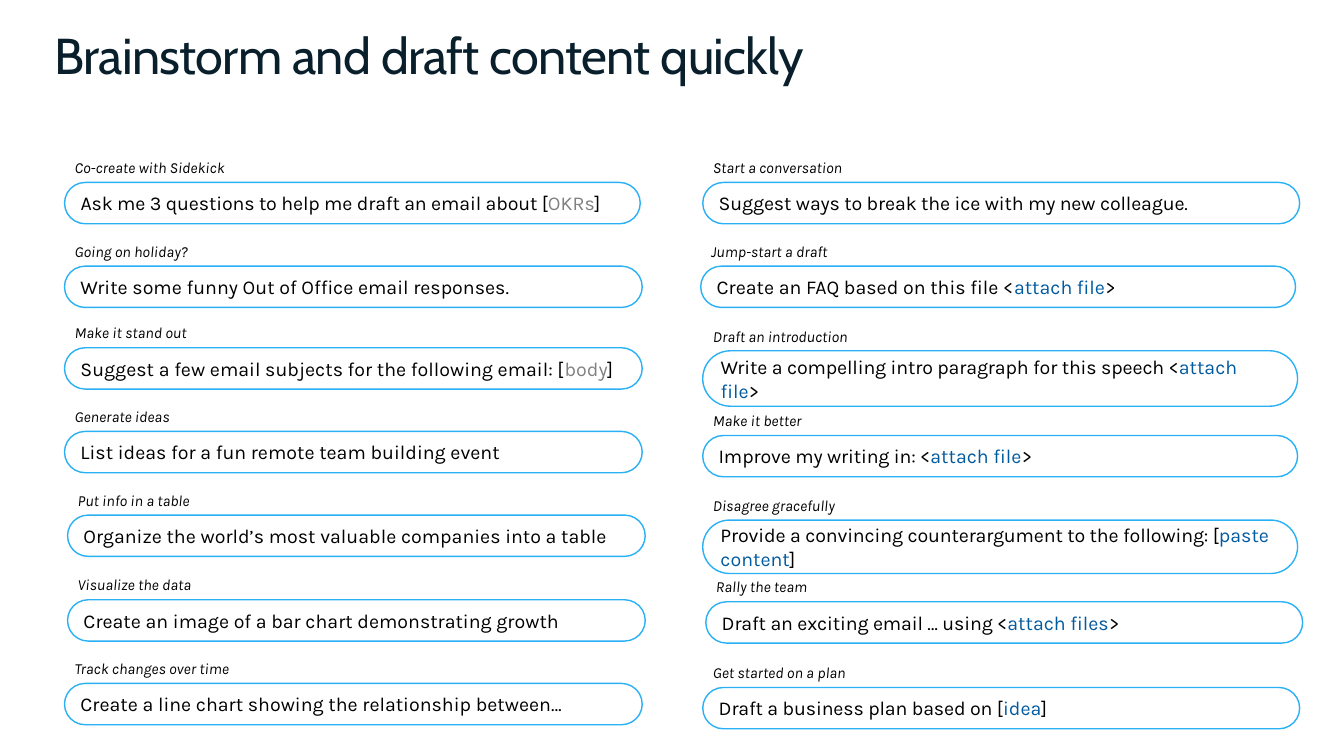
"""Build a slide of drafting prompts in two columns of labelled pills."""
from dataclasses import dataclass

from pptx import Presentation
from pptx.dml.color import RGBColor
from pptx.enum.shapes import MSO_SHAPE
from pptx.enum.text import MSO_ANCHOR, MSO_AUTO_SIZE, PP_ALIGN
from pptx.slide import Slide
from pptx.text.text import TextFrame, _Paragraph
from pptx.util import Inches, Pt

NAVY = RGBColor(0x09, 0x1F, 0x2C)
BLACK = RGBColor(0x00, 0x00, 0x00)
GREY = RGBColor(0x80, 0x80, 0x80)
LINK_BLUE = RGBColor(0x00, 0x5A, 0x9F)
SKY_BLUE = RGBColor(0x2A, 0xB0, 0xF5)
WHITE = RGBColor(0xFF, 0xFF, 0xFF)

TITLE_FONT = {"name": "Cabin", "size": Pt(36), "bold": False}
LABEL_FONT = {"name": "Karla", "size": Pt(11), "italic": True}
PROMPT_FONT = {"name": "Karla", "size": Pt(14)}
NO_MARGINS = {"margin_left": 0, "margin_top": 0, "margin_right": 0, "margin_bottom": 0}
LABEL_FRAME = {"word_wrap": True, **NO_MARGINS}
PROMPT_FRAME = {"word_wrap": True, "vertical_anchor": MSO_ANCHOR.MIDDLE}
TITLE_FRAME = {
    "word_wrap": True,
    "vertical_anchor": MSO_ANCHOR.TOP,
    "auto_size": MSO_AUTO_SIZE.NONE,
}

LABEL_INDENT = 0.1
LABEL_RISE = 0.24
LABEL_WIDTH = 5.38
LABEL_HEIGHT = 0.19


@dataclass(frozen=True)
class Prompt:
    """A labelled prompt with an optional highlighted slot."""

    label: str
    lead: str
    left: float
    top: float
    width: float
    slot: str = ""
    closing: str = ""
    height: float = 0.41
    tracking: float = 0


@dataclass(frozen=True)
class Column:
    """A column of prompts sharing one slot colour."""

    slot_color: RGBColor
    prompts: tuple[Prompt, ...]


COLUMNS = (
    Column(GREY, (
        Prompt("Co-create with Sidekick", "Ask me 3 questions to help me draft an email about [",
               0.64, 1.81, 5.71, "OKRs", "]", tracking=-0.1),
        Prompt("Going on holiday?", "Write some funny Out of Office email responses.",
               0.64, 2.64, 5.73),
        Prompt("Make it stand out", "Suggest a few email subjects for the following email: [",
               0.64, 3.45, 5.73, "body", "]"),
        Prompt("Generate ideas", "List ideas for a fun remote team building event",
               0.64, 4.28, 5.73),
        Prompt("Put info in a table", "Organize the world’s most valuable companies into a table",
               0.67, 5.11, 5.73),
        Prompt("Visualize the data", "Create an image of a bar chart demonstrating growth",
               0.67, 5.95, 5.73),
        Prompt("Track changes over time", "Create a line chart showing the relationship between…",
               0.64, 6.78, 5.73),
    )),
    Column(LINK_BLUE, (
        Prompt("Start a conversation", "Suggest ways to break the ice with my new colleague.",
               6.97, 1.81, 5.92, tracking=-0.1),
        Prompt("Jump-start a draft", "Create an FAQ based on this file <",
               6.95, 2.64, 5.9, "attach file", ">"),
        Prompt("Draft an introduction", "Write a compelling intro paragraph for this speech <",
               6.97, 3.48, 5.9, "attach file", ">", 0.55, -0.1),
        Prompt("Make it better", "Improve my writing in: <",
               6.97, 4.32, 5.9, "attach file", ">", tracking=-0.1),
        Prompt("Disagree gracefully", "Provide a convincing counterargument to the following: [",
               6.97, 5.16, 5.9, "paste content", "]", 0.53, -0.1),
        Prompt("Rally the team", "Draft an exciting email … using <",
               7, 5.97, 5.92, "attach files", ">", tracking=-0.1),
        Prompt("Get started on a plan", "Draft a business plan based on [",
               6.97, 6.82, 5.92, "idea", "]", tracking=-0.1),
    )),
)


def apply_format(target: object, values: dict) -> None:
    """Set every named attribute on the target."""
    for attribute, value in values.items():
        setattr(target, attribute, value)


def add_text(paragraph: _Paragraph, text: str, font: dict, color: RGBColor,
             tracking: float = 0) -> None:
    """Append a formatted run to the paragraph."""
    run = paragraph.add_run()
    run.text = text
    apply_format(run.font, font)
    run.font.color.rgb = color
    if tracking:
        run._r.get_or_add_rPr().set("spc", str(round(tracking * 100)))


def start_text(frame: TextFrame, frame_format: dict) -> _Paragraph:
    """Format the frame and return its left-aligned first paragraph."""
    apply_format(frame, frame_format)
    paragraph = frame.paragraphs[0]
    paragraph.alignment = PP_ALIGN.LEFT
    return paragraph


def add_title(slide: Slide, text: str) -> None:
    """Place the headline in the title placeholder."""
    headline = slide.shapes.title
    apply_format(headline, {"left": Inches(0.44), "top": Inches(0.19),
                            "width": Inches(12.04), "height": Inches(0.61)})
    add_text(start_text(headline.text_frame, TITLE_FRAME), text, TITLE_FONT, NAVY, -0.5)


def add_prompt(slide: Slide, prompt: Prompt, slot_color: RGBColor) -> None:
    """Draw one pill with its label above."""
    pill = slide.shapes.add_shape(
        MSO_SHAPE.ROUNDED_RECTANGLE, Inches(prompt.left), Inches(prompt.top),
        Inches(prompt.width), Inches(prompt.height))
    pill.adjustments[0] = 0.5
    pill.shadow.inherit = False
    pill.fill.solid()
    pill.fill.fore_color.rgb = WHITE
    pill.line.color.rgb = SKY_BLUE
    pill.line.width = Pt(1)
    wording = start_text(pill.text_frame, PROMPT_FRAME)
    add_text(wording, prompt.lead, PROMPT_FONT, BLACK, prompt.tracking)
    if prompt.slot:
        add_text(wording, prompt.slot, PROMPT_FONT, slot_color)
        add_text(wording, prompt.closing, PROMPT_FONT, BLACK, prompt.tracking)

    label = slide.shapes.add_textbox(
        Inches(prompt.left + LABEL_INDENT), Inches(prompt.top - LABEL_RISE),
        Inches(LABEL_WIDTH), Inches(LABEL_HEIGHT))
    add_text(start_text(label.text_frame, LABEL_FRAME), prompt.label, LABEL_FONT, BLACK)


def main() -> None:
    """Create and save the presentation."""
    presentation = Presentation()
    presentation.slide_width = Inches(13.33)
    presentation.slide_height = Inches(7.5)
    slide = presentation.slides.add_slide(presentation.slide_layouts[5])
    add_title(slide, "Brainstorm and draft content quickly")
    for column in COLUMNS:
        for prompt in column.prompts:
            add_prompt(slide, prompt, column.slot_color)
    presentation.save("out.pptx")


if __name__ == "__main__":
    main()
